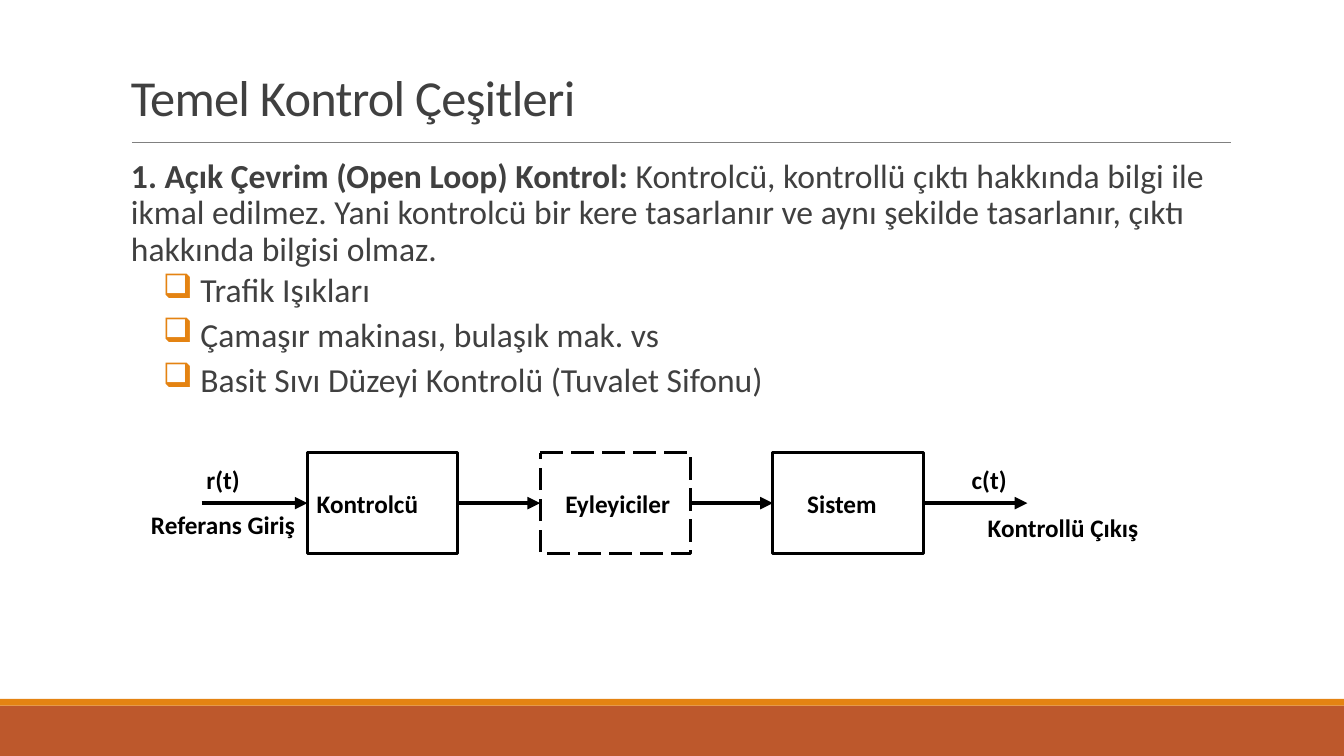
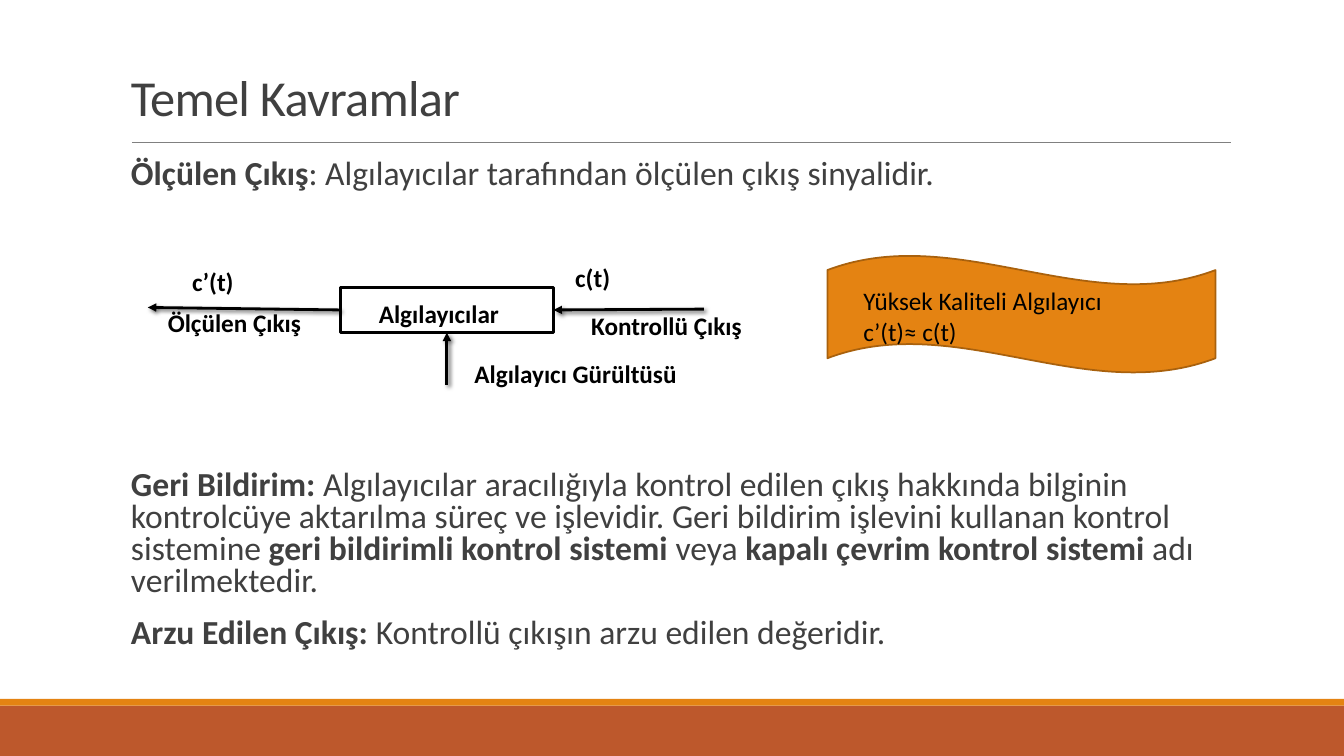
from dataclasses import dataclass

import pptx
import pptx.dml.color
import pptx.enum.dml
import pptx.enum.shapes
import pptx.enum.text
import pptx.oxml
import pptx.oxml.ns
import pptx.util

SHAPE = pptx.enum.shapes.MSO_SHAPE
ANCHOR = pptx.enum.text.MSO_ANCHOR
COLS, ROWS = 160, 90
CELL = pptx.util.Inches(1 / 12)


@dataclass(frozen=True)
class Theme:
    """Colours, font and type sizes of the deck."""
    font: str = "Calibri"
    title: int = 36
    body: int = 24
    label: int = 18
    text: str = "404040"
    ink: str = "000000"
    paper: str = "FFFFFF"
    accent: str = "E48312"
    accent_edge: str = "A9610D"
    band: str = "BD582C"
    rule: str = "808080"


@dataclass(frozen=True)
class Box:
    """A rectangle measured in grid columns and rows."""
    x: float
    y: float
    w: float
    h: float

    def sub(self, x, y, w, h):
        """Return a box placed relative to this one."""
        return Box(self.x + x, self.y + y, w, h)

    def point(self, x, y):
        """Return a point relative to this box in slide units."""
        return cells(self.x + x), cells(self.y + y)

    def frame(self):
        """Return left, top, width and height in slide units."""
        return tuple(cells(v) for v in (self.x, self.y, self.w, self.h))


THEME = Theme()
PAGE = Box(0, 0, COLS, ROWS)
TITLE = PAGE.sub(14.4, 3.7, 132, 12)
BODY = PAGE.sub(15.6, 18.4, 130.8, 30)
FEEDBACK = PAGE.sub(15.6, 55.4, 130.8, 27)
LOOP = PAGE.sub(16.8, 53.9, 123.4, 12)
SENSOR = PAGE.sub(17.6, 30.7, 71, 16.2)
NOTE = PAGE.sub(98.5, 30.4, 46.2, 14)


def cells(n):
    """Convert grid cells to slide units."""
    return round(n * CELL)


def rgb(colour):
    """Turn a hex string into a colour."""
    return pptx.dml.color.RGBColor.from_string(colour)


def add_xml(parent, tag, inner="", attrs=""):
    """Append a drawing element to a parent element."""
    ns = pptx.oxml.ns.nsdecls("a")
    parent.append(pptx.oxml.parse_xml(f"<a:{tag} {ns} {attrs}>{inner}</a:{tag}>"))


def add_run(p, text, size, colour, bold=False):
    """Add one formatted run."""
    r = p.add_run()
    r.text = text
    r.font.name, r.font.size, r.font.bold = THEME.font, pptx.util.Pt(size), bold
    r.font.color.rgb = rgb(colour)
    return r


def add_text(slide, box, insets=(1.2, 0.6), anchor=ANCHOR.TOP):
    """Add an empty wrapping text box and return its frame."""
    tf = slide.shapes.add_textbox(*box.frame()).text_frame
    tf.word_wrap, tf.vertical_anchor = True, anchor
    tf.margin_left = tf.margin_right = cells(insets[0])
    tf.margin_top = tf.margin_bottom = cells(insets[1])
    return tf


def add_shape(slide, kind, box, fill, edge=None, width=1.0):
    """Add a flat shape with an optional outline."""
    sp = slide.shapes.add_shape(kind, *box.frame())
    sp.shadow.inherit = False
    sp.fill.solid()
    sp.fill.fore_color.rgb = rgb(fill)
    if edge:
        sp.line.color.rgb, sp.line.width = rgb(edge), pptx.util.Pt(width)
    else:
        sp.line.fill.background()
    return sp


def fill_shape(sp, lines, indent, drop=0.0, bold=True):
    """Write left-aligned lines inside a shape."""
    tf = sp.text_frame
    tf.word_wrap, tf.vertical_anchor = True, ANCHOR.MIDDLE
    tf.margin_left, tf.margin_top = cells(indent), cells(drop)
    tf.margin_right = tf.margin_bottom = 0
    for i, line in enumerate(lines):
        p = tf.add_paragraph() if i else tf.paragraphs[0]
        p.alignment = pptx.enum.text.PP_ALIGN.LEFT
        add_run(p, line, THEME.label, THEME.ink, bold)


def add_line(slide, start, end, colour, width, effect=""):
    """Add a straight line between two points."""
    straight = pptx.enum.shapes.MSO_CONNECTOR.STRAIGHT
    line = slide.shapes.add_connector(straight, *start, *end)
    line.line.color.rgb, line.line.width = rgb(colour), pptx.util.Pt(width)
    add_xml(line._element.spPr, "effectLst", effect)
    return line


def add_arrow(slide, start, end, width, shadow=False):
    """Join points or (shape, side) pairs with an arrow."""
    effect = ('<a:outerShdw blurRad="38100" dist="25400" dir="2700000">'
              f'<a:srgbClr val="{THEME.ink}"><a:alpha val="60000"/></a:srgbClr>'
              '</a:outerShdw>') if shadow else ""
    free = [e for e in (start, end) if isinstance(e[0], int)]
    anchor = free[0] if free else (0, 0)
    line = add_line(slide, anchor, anchor, THEME.ink, width, effect)
    for ends, connect, axes in ((start, line.begin_connect, ("begin_x", "begin_y")),
                                (end, line.end_connect, ("end_x", "end_y"))):
        if isinstance(ends[0], int):
            for axis, value in zip(axes, ends):
                setattr(line, axis, value)
        else:
            connect(*ends)
    add_xml(line.line._get_or_add_ln(), "tailEnd", attrs='type="triangle"')


def add_labels(slide, box, labels):
    """Place bold signal names at offsets inside a diagram box."""
    for text, x, y, w in labels:
        tf = add_text(slide, box.sub(x, y, w, 4.8))
        add_run(tf.paragraphs[0], text, THEME.label, THEME.ink, True)


def add_body(slide, box, paragraphs, spacing, bullets=()):
    """Write paragraphs of (text, bold) runs, then bulleted lines."""
    tf = add_text(slide, box, (0, 0.6))
    rows = [(runs, False) for runs in paragraphs]
    rows += [([(" " + text, False)], True) for text in bullets]
    for i, (runs, bulleted) in enumerate(rows):
        p = tf.add_paragraph() if i else tf.paragraphs[0]
        p.line_spacing = spacing
        before, after = (2, 4) if bulleted else (12, 2)
        p.space_before, p.space_after = pptx.util.Pt(before), pptx.util.Pt(after)
        for text, bold in runs:
            add_run(p, text, THEME.body, THEME.text, bold)
        if bulleted:
            pPr = p._p.get_or_add_pPr()
            pPr.set("marL", str(cells(6.2)))
            pPr.set("indent", str(-cells(2.4)))
            add_xml(pPr, "buClr", f'<a:srgbClr val="{THEME.accent}"/>')
            add_xml(pPr, "buChar", attrs='char="❑"')


def new_slide(prs, title):
    """Add a slide with the shared bands, rule and title."""
    slide = prs.slides.add_slide(prs.slide_layouts[6])
    for y, h, colour in ((84, 6, THEME.band), (83.2, 0.8, THEME.accent)):
        add_shape(slide, SHAPE.RECTANGLE, PAGE.sub(0, y, COLS, h), colour)
    add_line(slide, PAGE.point(15.7, 16.9), PAGE.point(146.5, 16.9), THEME.rule, 0.5)
    p = add_text(slide, TITLE, anchor=ANCHOR.BOTTOM).paragraphs[0]
    p.line_spacing = 0.85
    r = add_run(p, title, THEME.title, THEME.text)
    r.font._element.set("spc", "-50")
    return slide


def add_block(slide, box, text, indent, drop=0.0):
    """Add an outlined block of a diagram."""
    sp = add_shape(slide, SHAPE.FLOWCHART_PROCESS, box, THEME.paper, THEME.ink, 2)
    fill_shape(sp, [text], indent, drop)
    return sp


def draw_loop(slide, box):
    """Draw the open loop chain of three blocks."""
    names = (("Kontrolcü", 1.1), ("Eyleyiciler", 3), ("Sistem", 4.1))
    blocks = [add_block(slide, box.sub(19.8 + 27.7 * i, 0, 17.9, box.h), name, indent)
              for i, (name, indent) in enumerate(names)]
    blocks[1].line.dash_style = pptx.enum.dml.MSO_LINE.LONG_DASH
    middle = box.h / 2
    starts = [box.point(7.2, middle)] + [(sp, 3) for sp in blocks]
    ends = [(sp, 1) for sp in blocks] + [box.point(105.5, middle)]
    for start, end in zip(starts, ends):
        add_arrow(slide, start, end, 3)
    add_labels(slide, box, (("r(t)", 6.6, 0.8, 8.5), ("c(t)", 97.7, 0.8, 8.5),
                            ("Referans Giriş", 0, 6.2, 23.8),
                            ("Kontrollü Çıkış", 99.6, 6.5, 23.8)))


def draw_sensor(slide, box):
    """Draw the sensor block with its three signals."""
    sp = add_block(slide, box.sub(22.9, 3.5, 25.4, 5.4), "Algılayıcılar", 4.6, 0.9)
    for start, end in ((box.point(66.2, 6.1), (sp, 3)),
                       ((sp, 1), box.point(0, 5.9)),
                       (box.point(35.6, 15.1), (sp, 2))):
        add_arrow(slide, start, end, 2, shadow=True)
    add_labels(slide, box, (("c(t)", 49.7, 0, 8.5), ("c’(t)", 4.1, 0.4, 8.5),
                            ("Kontrollü Çıkış", 51.6, 5.6, 23.8),
                            ("Ölçülen Çıkış", 1.2, 5.3, 23.8),
                            ("Algılayıcı Gürültüsü", 37.7, 11.4, 33.2)))


def draw_note(slide, box):
    """Draw the wave banner about sensor quality."""
    sp = add_shape(slide, SHAPE.WAVE, box, THEME.accent, THEME.accent_edge, 1.25)
    fill_shape(sp, ["Yüksek Kaliteli Algılayıcı", "c’(t)≈ c(t)"], 4.3, 0.4, bold=False)


def control_types(prs):
    """Build the slide on open loop control."""
    slide = new_slide(prs, "Temel Kontrol Çeşitleri")
    add_body(slide, BODY, [[
        ("1. Açık Çevrim (Open Loop) Kontrol: ", True),
        ("Kontrolcü, kontrollü çıktı hakkında bilgi ile ikmal edilmez. Yani kontrolcü "
         "bir kere tasarlanır ve aynı şekilde tasarlanır, çıktı hakkında bilgisi olmaz.",
         False)]], 0.9,
        ("Trafik Işıkları", "Çamaşır makinası, bulaşık mak. vs",
         "Basit Sıvı Düzeyi Kontrolü (Tuvalet Sifonu)"))
    draw_loop(slide, LOOP)


def concepts(prs):
    """Build the slide on measured output and feedback."""
    slide = new_slide(prs, "Temel Kavramlar")
    add_body(slide, BODY.sub(0, 0, BODY.w, 6), [[
        ("Ölçülen Çıkış", True),
        (": Algılayıcılar tarafından ölçülen çıkış sinyalidir.", False)]], 0.8)
    add_body(slide, FEEDBACK, [
        [("Geri Bildirim: ", True),
         ("Algılayıcılar aracılığıyla kontrol edilen çıkış hakkında bilginin kontrolcüye "
          "aktarılma süreç ve işlevidir. Geri bildirim işlevini kullanan kontrol "
          "sistemine ", False),
         ("geri bildirimli kontrol sistemi ", True), ("veya ", False),
         ("kapalı çevrim kontrol sistemi ", True), ("adı verilmektedir.", False)],
        [("Arzu Edilen Çıkış: ", True),
         ("Kontrollü çıkışın arzu edilen değeridir.", False)]], 0.8)
    draw_sensor(slide, SENSOR)
    draw_note(slide, NOTE)


def main():
    """Build and save the deck."""
    prs = pptx.Presentation()
    prs.slide_width, prs.slide_height = cells(COLS), cells(ROWS)
    control_types(prs)
    concepts(prs)
    prs.save("out.pptx")


if __name__ == "__main__":
    main()
